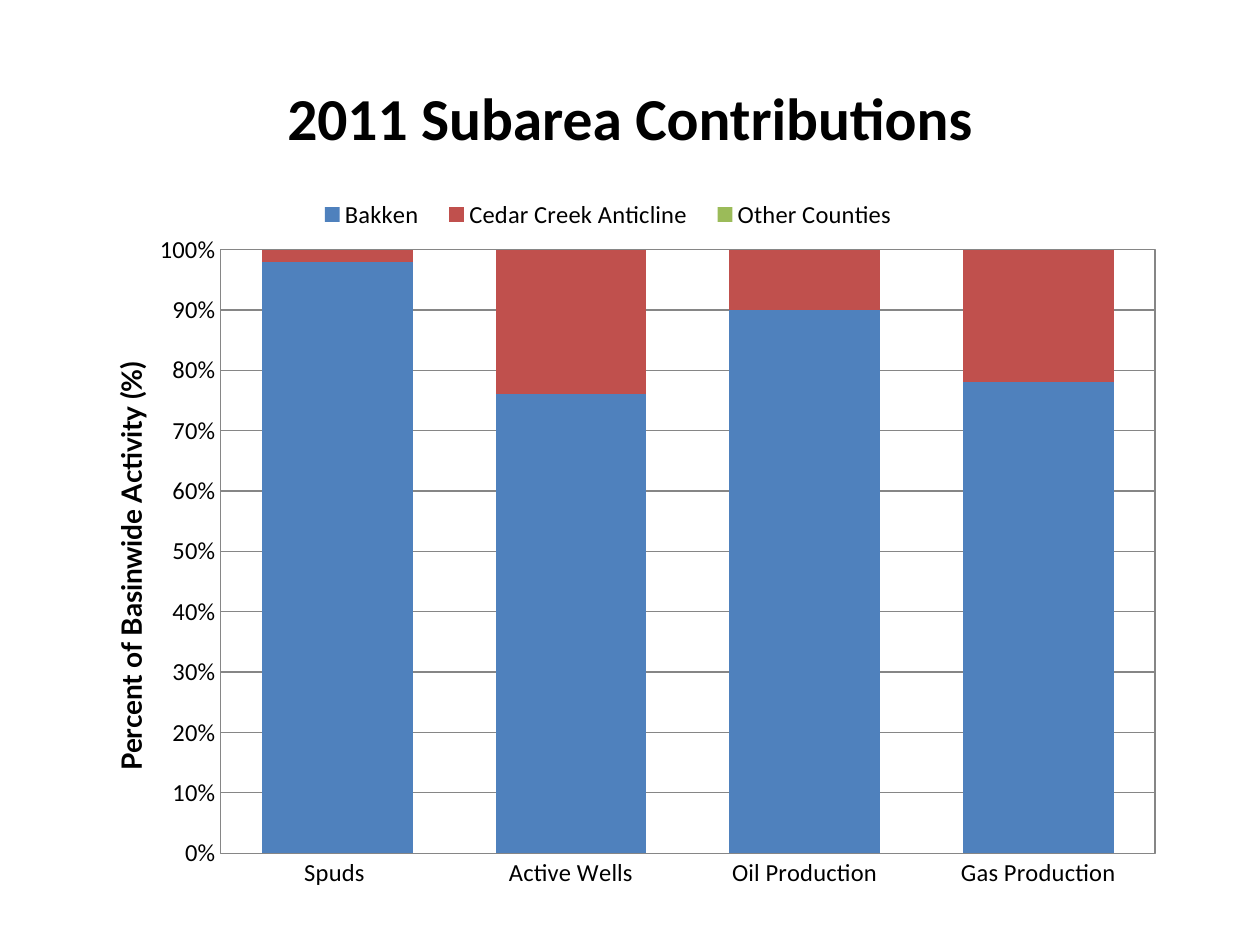
from typing import NamedTuple, Optional

from lxml import etree
from pptx import Presentation
from pptx.chart.data import CategoryChartData
from pptx.dml.color import RGBColor
from pptx.enum.chart import XL_CHART_TYPE, XL_LEGEND_POSITION, XL_TICK_MARK
from pptx.enum.text import MSO_ANCHOR, PP_ALIGN
from pptx.oxml import parse_xml
from pptx.oxml.ns import nsdecls, qn
from pptx.util import Pt

STACKED_100 = XL_CHART_TYPE.COLUMN_STACKED_100
LEGEND_BOTTOM = XL_LEGEND_POSITION.BOTTOM
NO_TICK = XL_TICK_MARK.NONE
MIDDLE, CENTER = MSO_ANCHOR.MIDDLE, PP_ALIGN.CENTER

BLACK = RGBColor(0x00, 0x00, 0x00)
GRAY = RGBColor(0x86, 0x86, 0x86)
BLUE = RGBColor(0x4F, 0x81, 0xBD)
RED = RGBColor(0xC0, 0x50, 0x4D)
GREEN = RGBColor(0x9B, 0xBB, 0x59)


class Subarea(NamedTuple):
    name: str
    shares: tuple
    color: RGBColor


class Layout(NamedTuple):
    """Position as fractions of the chart; a size is optional."""
    x: float
    y: float
    w: Optional[float] = None
    h: Optional[float] = None


CATEGORIES = ("Spuds ", "Active Wells", "Oil Production", "Gas Production")
SUBAREAS = (
    Subarea("Bakken", (98, 76, 90, 78), BLUE),
    Subarea("Cedar Creek Anticline", (2, 24, 10, 22), RED),
    Subarea("Other Counties", (0, 0, 0, 0), GREEN),
)


def set_font(font, size: float, name: str = "Calibri", bold: bool = False) -> None:
    for key, value in dict(size=Pt(size), name=name, bold=bold).items():
        setattr(font, key, value)
    font.color.rgb = BLACK


def set_layout(parent, layout: Layout, before: tuple, inner: bool = False) -> None:
    """Place a chart part by hand, ahead of the listed sibling tags."""
    for old in parent.findall(qn("c:layout")):
        parent.remove(old)
    box = parse_xml(f"<c:layout {nsdecls('c')}><c:manualLayout/></c:layout>")
    manual = box[0]
    values = [("layoutTarget", "inner")] if inner else []
    values += [("xMode", "edge"), ("yMode", "edge")]
    values += [(k, v) for k, v in layout._asdict().items() if v is not None]
    for tag, value in values:
        etree.SubElement(manual, qn(f"c:{tag}")).set("val", str(value))
    following = next(el for el in parent if el.tag in [qn(t) for t in before])
    following.addprevious(box)


def add_title(s, text: str) -> None:
    sp = s.shapes.title
    sp.left, sp.top, sp.width, sp.height = Pt(36), Pt(21.6), Pt(648), Pt(90)
    tf = sp.text_frame
    tf.text = text
    tf.vertical_anchor = MIDDLE
    p = tf.paragraphs[0]
    p.alignment = CENTER
    set_font(p.runs[0].font, 34, bold=True)


def add_subarea_chart(s) -> None:
    data = CategoryChartData(number_format="0")
    data.categories = CATEGORIES
    for area in SUBAREAS:
        data.add_series(area.name, area.shares)
    chart = s.shapes.add_chart(
        STACKED_100, Pt(48), Pt(108), Pt(624), Pt(417.6), data).chart
    set_font(chart.font, 10)
    chart.has_title = False

    # Columns
    plot = chart.plots[0]
    plot.gap_width, plot.overlap, plot.vary_by_categories = 55, 100, False
    for series, area in zip(plot.series, SUBAREAS):
        series.format.fill.solid()
        series.format.fill.fore_color.rgb = area.color

    # Axes and gridlines
    value_axis = chart.value_axis
    value_axis.has_major_gridlines = True
    lines = [value_axis.major_gridlines.format.line]
    for axis in (chart.category_axis, value_axis):
        axis.major_tick_mark = axis.minor_tick_mark = NO_TICK
        set_font(axis.tick_labels.font, 14)
        lines.append(axis.format.line)
    for line in lines:
        line.color.rgb = GRAY
        line.width = Pt(0.75)
    value_axis.maximum_scale, value_axis.minimum_scale = 1, 0
    value_axis.major_unit = 0.1
    labels = value_axis.tick_labels
    labels.number_format, labels.number_format_is_linked = "0%", False

    # Value axis title
    title = value_axis.axis_title
    title.text_frame.text = "Percent of Basinwide Activity (%)"
    p = title.text_frame.paragraphs[0]
    set_font(p.runs[0].font, 16, "Lato", bold=True)
    set_layout(title._element, Layout(0.02, 0.23), ("c:overlay",))

    # Legend above the plot
    chart.has_legend = True
    legend = chart.legend
    legend.position = LEGEND_BOTTOM
    legend.include_in_layout = False
    set_font(legend.font, 14)
    set_layout(legend._element, Layout(0.2, 0.01, 0.56, 0.05), ("c:overlay",))

    # Plot frame
    area = chart._chartSpace.chart.plotArea
    set_layout(area, Layout(0.125, 0.083, 0.856, 0.826), ("c:barChart",), inner=True)
    area.append(parse_xml(
        f'<c:spPr {nsdecls("c", "a")}><a:noFill/><a:ln w="9525"><a:solidFill>'
        f'<a:srgbClr val="{GRAY}"/></a:solidFill></a:ln></c:spPr>'))


def main() -> None:
    prs = Presentation()
    prs.slide_width, prs.slide_height = Pt(720), Pt(540)
    s = prs.slides.add_slide(prs.slide_layouts[5])
    add_title(s, "2011 Subarea Contributions")
    add_subarea_chart(s)
    prs.save("out.pptx")


if __name__ == "__main__":
    main()
